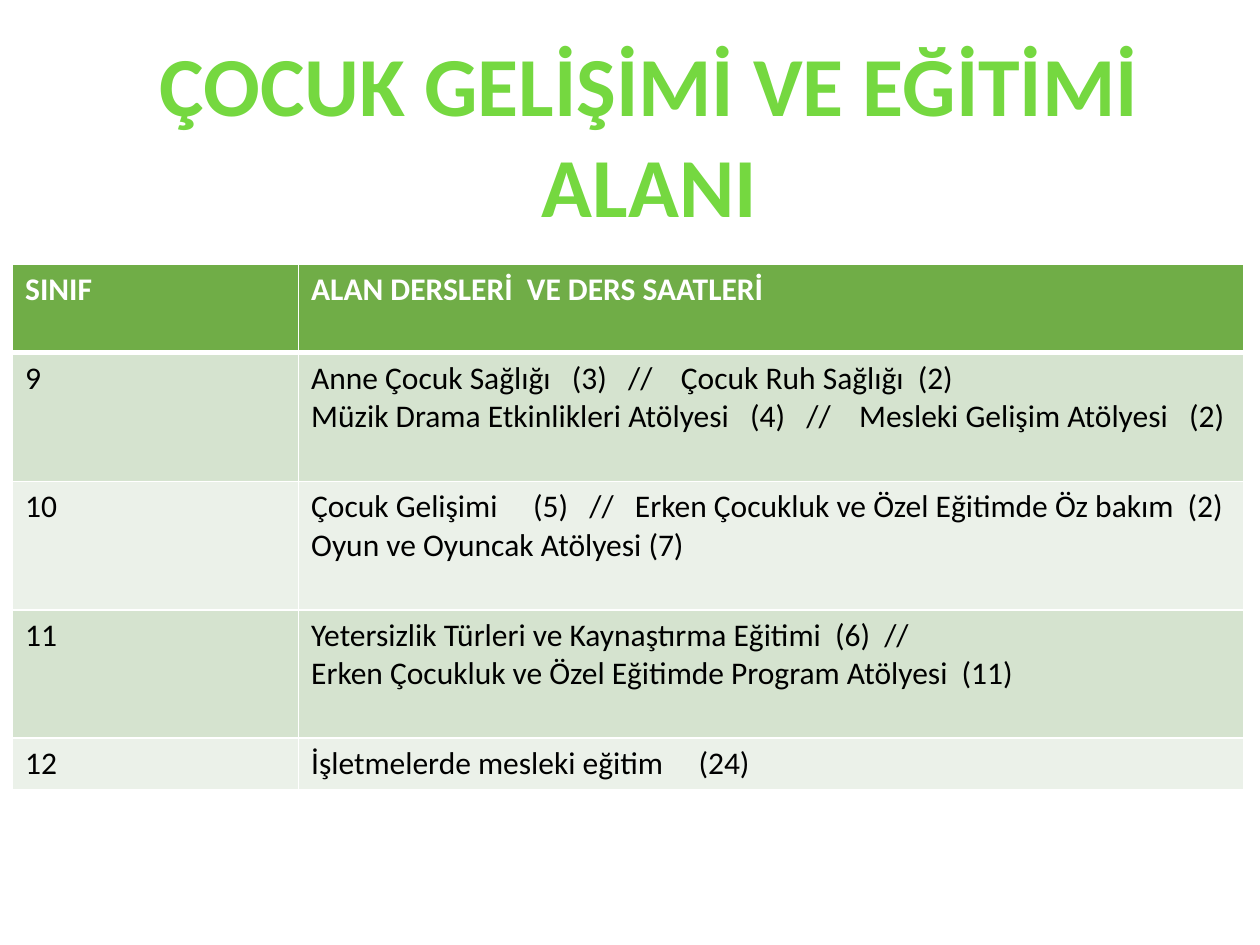
from lxml import etree
from pptx import Presentation
from pptx import util as u
from pptx.dml.color import RGBColor
from pptx.enum import text
from pptx.oxml.ns import qn


def style(frame, size, color, bold):
    for paragraph in frame.paragraphs:
        for run in paragraph.runs:
            run.font.name = "Calibri"
            run.font.size = u.Pt(size)
            run.font.bold = bold
            run.font.color.rgb = RGBColor.from_string(color)


def border(cell, side, points, color):
    line = etree.SubElement(cell._tc.get_or_add_tcPr(), qn("a:ln" + side), w=str(u.Pt(points)))
    fill = etree.SubElement(line, qn("a:solidFill"))
    etree.SubElement(fill, qn("a:srgbClr"), val=color)


prs = Presentation()
prs.slide_width, prs.slide_height = u.Inches(10), u.Inches(7.5)
slide = prs.slides.add_slide(prs.slide_layouts[6])

# Courses by grade
courses = [
    ("SINIF", "ALAN DERSLERİ  VE DERS SAATLERİ"),
    ("9", "Anne Çocuk Sağlığı   (3)   //    Çocuk Ruh Sağlığı  (2)\n"
          "Müzik Drama Etkinlikleri Atölyesi   (4)   //    Mesleki Gelişim Atölyesi   (2)"),
    ("10", "Çocuk Gelişimi     (5)   //   Erken Çocukluk ve Özel Eğitimde Öz bakım  (2)\n"
           "Oyun ve Oyuncak Atölyesi (7)"),
    ("11", "Yetersizlik Türleri ve Kaynaştırma Eğitimi  (6)  //\n"
           "Erken Çocukluk ve Özel Eğitimde Program Atölyesi  (11)"),
    ("12", "İşletmelerde mesleki eğitim     (24)"),
]
column_widths = [2.27, 7.5]
row_heights = [0.7, 1.02, 1.02, 1.02, 0.41]

timetable = slide.shapes.add_table(
    len(courses), len(column_widths), u.Inches(0.1), u.Inches(2.1),
    u.Inches(sum(column_widths)), u.Inches(sum(row_heights))).table
for column, width in zip(timetable.columns, column_widths):
    column.width = u.Inches(width)

for r, (grade_row, height) in enumerate(zip(courses, row_heights)):
    timetable.rows[r].height = u.Inches(height)
    header = r == 0
    background = "70AD47" if header else ("EBF1E9", "D5E3CF")[r % 2]
    for c, wording in enumerate(grade_row):
        cell = timetable.cell(r, c)
        cell.text_frame.text = wording
        style(cell.text_frame, 18, "FFFFFF" if header else "000000", header)
        for side in "LRTB":
            thick = (header and side == "B") or (r == 1 and side == "T")
            border(cell, side, 3 if thick else 1, "FFFFFF")
        cell.fill.solid()
        cell.fill.fore_color.rgb = RGBColor.from_string(background)

# Title
title = slide.shapes.add_textbox(
    u.Inches(0.55), u.Inches(0.21), u.Inches(9.21), u.Inches(1.72)).text_frame
title.word_wrap = True
title.auto_size = text.MSO_AUTO_SIZE.SHAPE_TO_FIT_TEXT
title.text = "ÇOCUK GELİŞİMİ VE EĞİTİMİ ALANI"
title.paragraphs[0].alignment = text.PP_ALIGN.CENTER
style(title, 48, "75D840", True)

prs.save("out.pptx")
